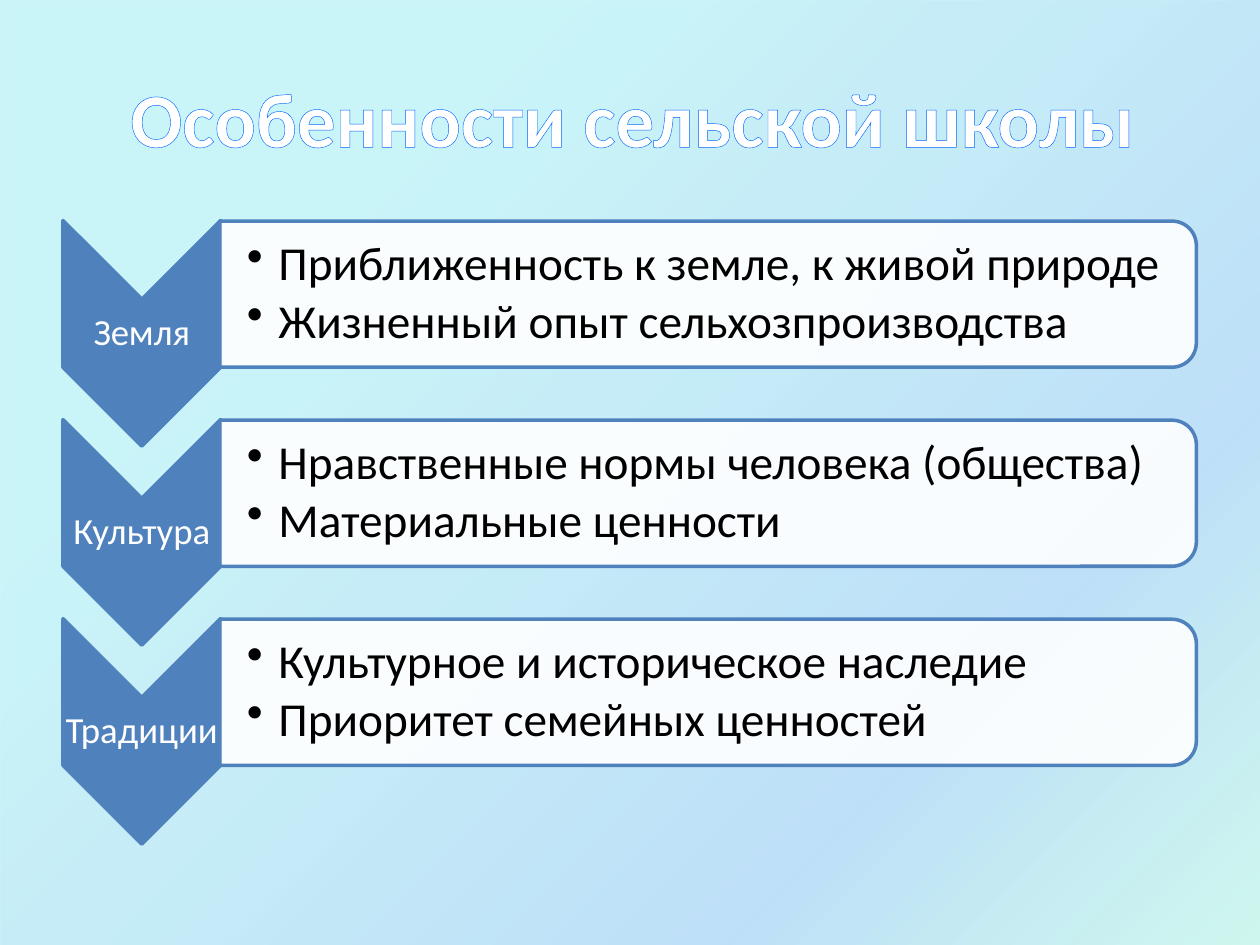
import dataclasses
import pptx
import pptx.dml.color
import pptx.enum.shapes
import pptx.enum.text
import pptx.oxml
import pptx.oxml.ns
import pptx.util

Inches = pptx.util.Inches
Pt = pptx.util.Pt
Kind = pptx.enum.shapes.MSO_SHAPE
Align = pptx.enum.text.PP_ALIGN
NS = pptx.oxml.ns.nsdecls("a")

COLORS = {
    "white": "FFFFFF",
    "black": "000000",
    "blue": "4F81BD",
    "edge": "0066FF",
}
# Position, colour and opacity, in percent
STOPS = [(25, "21D6E0", 23), (75, "0087E6", 25), (100, "03D4A8", 18), (100, "005CBF", 26)]
TOP, STEP = 1.81, 1.58


@dataclasses.dataclass
class Row:
    label: str
    points: list[str]


ROWS = [
    Row("Земля", ["Приближенность к земле, к живой природе",
                  "Жизненный опыт сельхозпроизводства"]),
    Row("Культура", ["Нравственные нормы человека (общества)",
                     "Материальные ценности"]),
    Row("Традиции", ["Культурное и историческое наследие",
                     "Приоритет семейных ценностей"]),
]


def get_rgb(name: str):
    return pptx.dml.color.RGBColor.from_string(COLORS[name])


def set_alpha(node, share: int) -> None:
    node.append(pptx.oxml.parse_xml(f'<a:alpha {NS} val="{share * 1000}"/>'))


def add_ground(slide) -> None:
    ground = slide.shapes.add_shape(Kind.RECTANGLE, 0, 0, Inches(10), Inches(7.67))
    ground.shadow.inherit = False
    ground.line.fill.background()
    ground.fill.gradient()
    ground.fill.gradient_angle = 315
    stops = ground.element.spPr.find(".//" + pptx.oxml.ns.qn("a:gsLst"))
    for old in list(stops):
        stops.remove(old)
    for place, color, share in STOPS:
        stop = pptx.oxml.parse_xml(
            f'<a:gs {NS} pos="{place * 1000}"><a:srgbClr val="{color}"/></a:gs>')
        set_alpha(stop[0], share)
        stops.append(stop)


def add_turned(slide, kind, left: float, top: float, width: float, height: float, fill: str):
    """Add a shape turned by 90 degrees; the box is given as it is before the turn."""
    shape = slide.shapes.add_shape(
        kind, Inches(left), Inches(top), Inches(width), Inches(height))
    shape.rotation = 90
    shape.shadow.inherit = False
    shape.fill.solid()
    shape.fill.fore_color.rgb = get_rgb(fill)
    shape.line.color.rgb = get_rgb("blue")
    shape.line.width = Pt(2)
    return shape


def add_frame(slide, left: float, top: float, width: float, height: float,
              side: float, inset: float):
    """Add a text box with its own left inset and one inset for the other sides."""
    box = slide.shapes.add_textbox(Inches(left), Inches(top), Inches(width), Inches(height))
    frame = box.text_frame
    frame.word_wrap = True
    frame.vertical_anchor = pptx.enum.text.MSO_ANCHOR.MIDDLE
    frame.margin_left = Inches(side)
    frame.margin_top = frame.margin_right = frame.margin_bottom = Inches(inset)
    return frame


def set_font(para, size: float, color: str) -> None:
    para.font.name = "Calibri"
    para.font.size = Pt(size)
    para.font.color.rgb = get_rgb(color)


def add_title(slide, text: str) -> None:
    para = add_frame(slide, 0.5, 0.3, 9, 1.25, 0.1, 0.05).paragraphs[0]
    para.alignment = Align.CENTER
    run = para.add_run()
    run.text = text
    set_font(run, 44, "white")
    run.font.bold = True
    run.font.element.insert(0, pptx.oxml.parse_xml(
        f'<a:ln {NS} w="{Pt(1.45)}"><a:solidFill>'
        f'<a:srgbClr val="{COLORS["edge"]}"/></a:solidFill></a:ln>')) if hasattr(
            run.font, "element") else run.font.fill._xPr.insert(0, pptx.oxml.parse_xml(
                f'<a:ln {NS} w="{Pt(1.45)}"><a:solidFill>'
                f'<a:srgbClr val="{COLORS["edge"]}"/></a:solidFill></a:ln>'))


def add_label(slide, text: str, top: float) -> None:
    para = add_frame(slide, 0.5, top, 1.25, 0.54, 0.01, 0.01).paragraphs[0]
    para.text = text
    para.alignment = Align.CENTER
    para.line_spacing = 0.9
    para.space_after = Pt(7.35)
    set_font(para, 21, "white")


def add_points(slide, points: list[str], top: float) -> None:
    frame = add_frame(slide, 1.75, top, 7.69, 1.05, 0.21, 0.02)
    for place, text in enumerate(points):
        para = frame.add_paragraph() if place else frame.paragraphs[0]
        para.text = text
        para.level = 1
        props = para._p.get_or_add_pPr()
        props.set("marL", str(Inches(0.25)))
        props.set("indent", str(Inches(-0.25)))
        props.append(pptx.oxml.parse_xml(f'<a:buChar {NS} char="•"/>'))
        para.line_spacing = 0.9
        para.space_after = Pt(4.05)
        set_font(para, 27, "black")


def add_row(slide, row: Row, top: float) -> None:
    add_turned(slide, Kind.CHEVRON, 0.23, top + 0.21, 1.79, 1.25, "blue")
    add_label(slide, row.label, top + 0.57)
    panel = add_turned(slide, Kind.ROUND_2_SAME_RECTANGLE,
                       5.04, top - 3.35, 1.16, 7.75, "white")
    set_alpha(panel.element.spPr.find(".//" + pptx.oxml.ns.qn("a:srgbClr")), 90)
    add_points(slide, row.points, top)


def main() -> None:
    deck = pptx.Presentation()
    deck.slide_width, deck.slide_height = Inches(10), Inches(7.5)
    slide = deck.slides.add_slide(deck.slide_layouts[6])
    add_ground(slide)
    add_title(slide, "Особенности сельской школы")
    for place, row in enumerate(ROWS):
        add_row(slide, row, TOP + place * STEP)
    deck.save("out.pptx")


if __name__ == "__main__":
    main()
